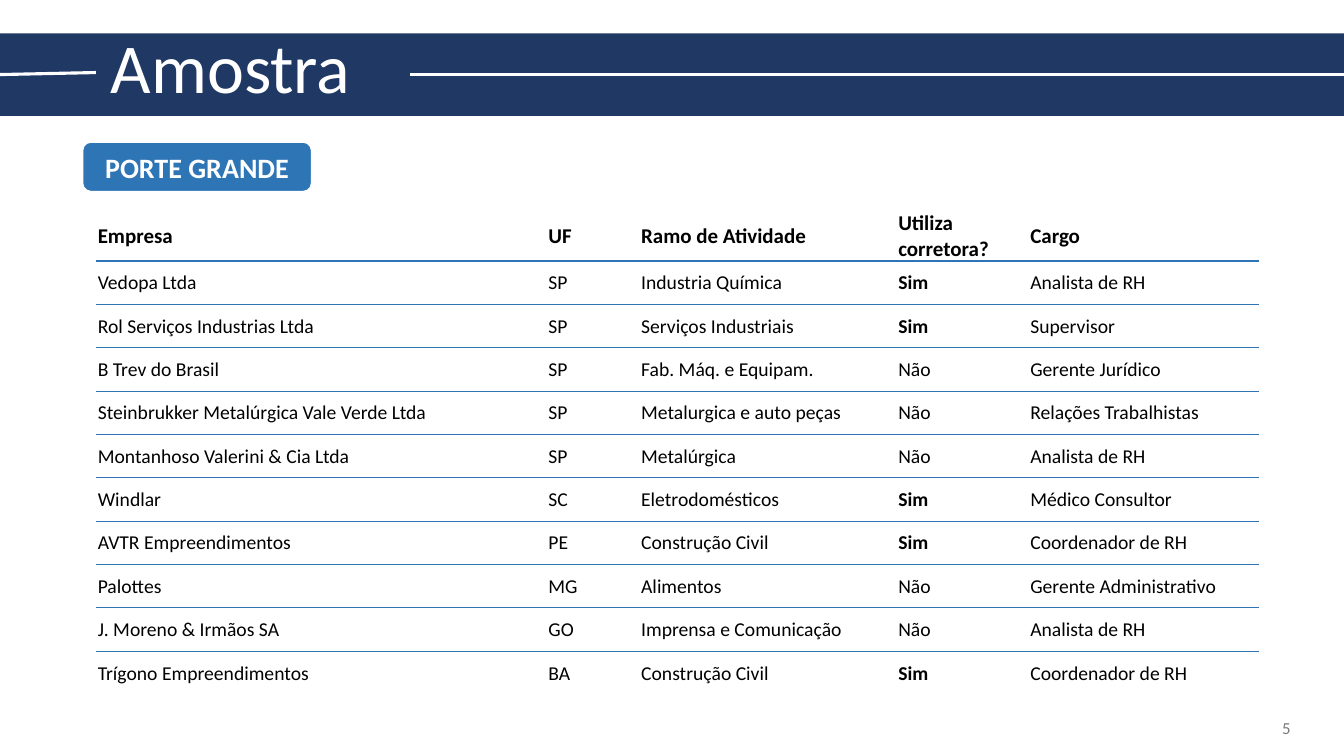
from lxml.etree import SubElement
from pptx import Presentation
from pptx.dml.color import RGBColor
from pptx.enum.shapes import MSO_CONNECTOR, MSO_SHAPE
from pptx.enum.text import MSO_ANCHOR, PP_ALIGN
from pptx.oxml import parse_xml
from pptx.oxml.ns import nsdecls, qn
from pptx.util import Inches, Pt

NAVY = RGBColor(0x20, 0x38, 0x64)
BLUE = RGBColor(0x2E, 0x75, 0xB6)
WHITE = RGBColor(0xFF, 0xFF, 0xFF)
BLACK = RGBColor(0x00, 0x00, 0x00)
GRAY = RGBColor(0x79, 0x79, 0x79)

COL_WIDTHS = [4.47, 0.92, 2.55, 1.31, 2.27]
HEADER_HEIGHT, ROW_HEIGHT = 0.5, 0.43
ROWS = [
    ("Empresa", "UF", "Ramo de Atividade", "Utiliza corretora?", "Cargo"),
    ("Vedopa Ltda", "SP", "Industria Química", "Sim", "Analista de RH"),
    ("Rol Serviços Industrias Ltda", "SP", "Serviços Industriais", "Sim", "Supervisor"),
    ("B Trev do Brasil", "SP", "Fab. Máq. e Equipam.", "Não", "Gerente Jurídico"),
    ("Steinbrukker Metalúrgica Vale Verde Ltda", "SP", "Metalurgica e auto peças", "Não",
     "Relações Trabalhistas"),
    ("Montanhoso Valerini & Cia Ltda", "SP", "Metalúrgica", "Não", "Analista de RH"),
    ("Windlar", "SC", "Eletrodomésticos", "Sim", "Médico Consultor"),
    ("AVTR Empreendimentos", "PE", "Construção Civil", "Sim", "Coordenador de RH"),
    ("Palottes", "MG", "Alimentos", "Não", "Gerente Administrativo"),
    ("J. Moreno & Irmãos SA", "GO", "Imprensa e Comunicação", "Não", "Analista de RH"),
    ("Trígono Empreendimentos", "BA", "Construção Civil", "Sim", "Coordenador de RH"),
]


def write_text(tf, text, size, color, bold=False, align=PP_ALIGN.LEFT,
               anchor=MSO_ANCHOR.MIDDLE, spacing=None):
    """Write one formatted paragraph into a text frame."""
    tf.word_wrap = True
    tf.vertical_anchor = anchor
    p = tf.paragraphs[0]
    p.alignment = align
    if spacing:
        p.line_spacing = Pt(spacing)
    r = p.add_run()
    r.text = text
    r.font.name = "Calibri"
    r.font.size = Pt(size)
    r.font.bold = bold
    r.font.color.rgb = color


def add_box(s, shape, left, top, width, height, fill):
    """Add a filled shape without outline or shadow."""
    sp = s.shapes.add_shape(shape, Inches(left), Inches(top), Inches(width), Inches(height))
    sp.shadow.inherit = False
    sp.fill.solid()
    sp.fill.fore_color.rgb = fill
    sp.line.fill.background()
    return sp


def add_rule(s, x1, y1, x2, y2):
    """Add a white line between two points."""
    line = s.shapes.add_connector(MSO_CONNECTOR.STRAIGHT, Inches(x1), Inches(y1),
                                  Inches(x2), Inches(y2))
    line.line.color.rgb = WHITE
    line.line.width = Pt(2.25)
    SubElement(line._element.spPr, qn("a:effectLst"))


def add_label(s, left, top, width, height, text, **fmt):
    """Add a text box with one formatted paragraph."""
    tb = s.shapes.add_textbox(Inches(left), Inches(top), Inches(width), Inches(height))
    write_text(tb.text_frame, text, **fmt)


def add_banner(s, left, top, width, height, title):
    """Draw the title band with a line on each side of the title."""
    add_box(s, MSO_SHAPE.RECTANGLE, left, top, width, height, NAVY)
    middle = top + height / 2
    add_rule(s, left + 4.07, middle, left + width, middle)
    add_rule(s, left + 0.95, middle - 0.02, left, middle)
    add_label(s, left + 1, top + 0.13, 10.65, 0.71, title, size=50, color=WHITE,
              anchor=MSO_ANCHOR.TOP, spacing=40)


def add_badge(s, left, top, width, height, text):
    """Draw the rounded section badge."""
    sp = add_box(s, MSO_SHAPE.ROUNDED_RECTANGLE, left, top, width, height, BLUE)
    sp.line.color.rgb = WHITE
    sp.line.width = Pt(1)
    write_text(sp.text_frame, text, size=20, color=WHITE, bold=True, align=PP_ALIGN.CENTER)


def set_borders(cell, top, bottom):
    """Give a cell white sides and the given top and bottom colours."""
    tc_pr = cell._tc.get_or_add_tcPr()
    sides = {"lnL": WHITE, "lnR": WHITE, "lnT": top, "lnB": bottom}
    for i, (tag, color) in enumerate(sides.items()):
        tc_pr.insert(i, parse_xml(
            f'<a:{tag} {nsdecls("a")} w="{Pt(1)}"><a:solidFill>'
            f'<a:srgbClr val="{color}"/></a:solidFill></a:{tag}>'))


def add_sample_table(s, left, top, rows):
    """Draw the company table with blue rules between its rows."""
    heights = [HEADER_HEIGHT] + [ROW_HEIGHT] * (len(rows) - 1)
    table = s.shapes.add_table(len(rows), len(COL_WIDTHS), Inches(left), Inches(top),
                               Inches(sum(COL_WIDTHS)), Inches(sum(heights))).table
    table.first_row = table.horz_banding = False
    for column, width in zip(table.columns, COL_WIDTHS):
        column.width = Inches(width)
    for i, (values, height) in enumerate(zip(rows, heights)):
        table.rows[i].height = Inches(height)
        header, last = i == 0, i == len(rows) - 1
        for j, value in enumerate(values):
            cell = table.cell(i, j)
            cell.margin_left = cell.margin_right = cell.margin_top = Inches(0.01)
            cell.margin_bottom = 0
            cell.vertical_anchor = MSO_ANCHOR.MIDDLE
            cell.fill.background()
            set_borders(cell, WHITE if header else BLUE, WHITE if last else BLUE)
            write_text(cell.text_frame, value, size=15 if header else 14, color=BLACK,
                       bold=header or value == "Sim")


def main():
    """Build the sample slide and save it."""
    prs = Presentation()
    prs.slide_width, prs.slide_height = Inches(13.33), Inches(7.5)
    s = prs.slides.add_slide(prs.slide_layouts[6])
    add_banner(s, 0, 0.33, 13.33, 0.82, "Amostra")
    add_sample_table(s, 0.96, 2.08, ROWS)
    add_badge(s, 0.82, 1.41, 2.27, 0.49, "PORTE GRANDE")
    add_label(s, 9.9, 7.02, 3, 0.4, "5", size=12, color=GRAY, align=PP_ALIGN.RIGHT)
    prs.save("out.pptx")


if __name__ == "__main__":
    main()
